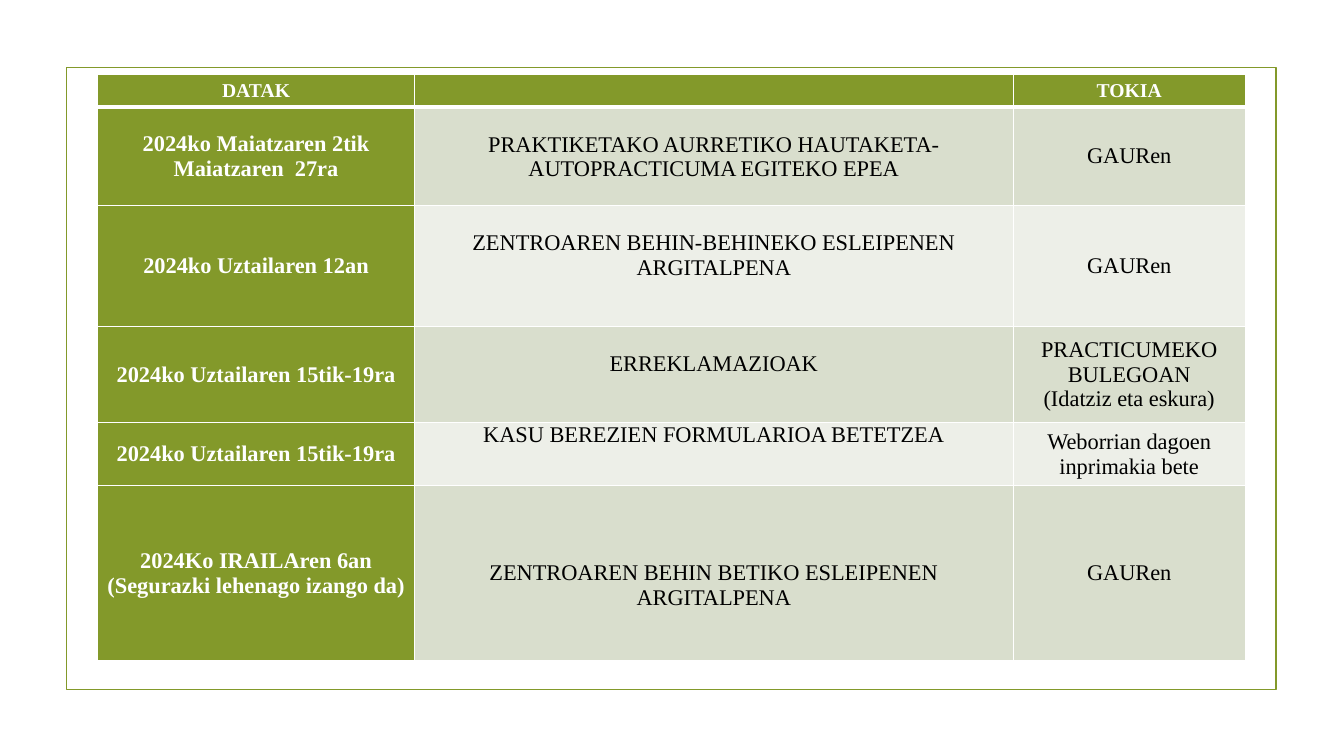
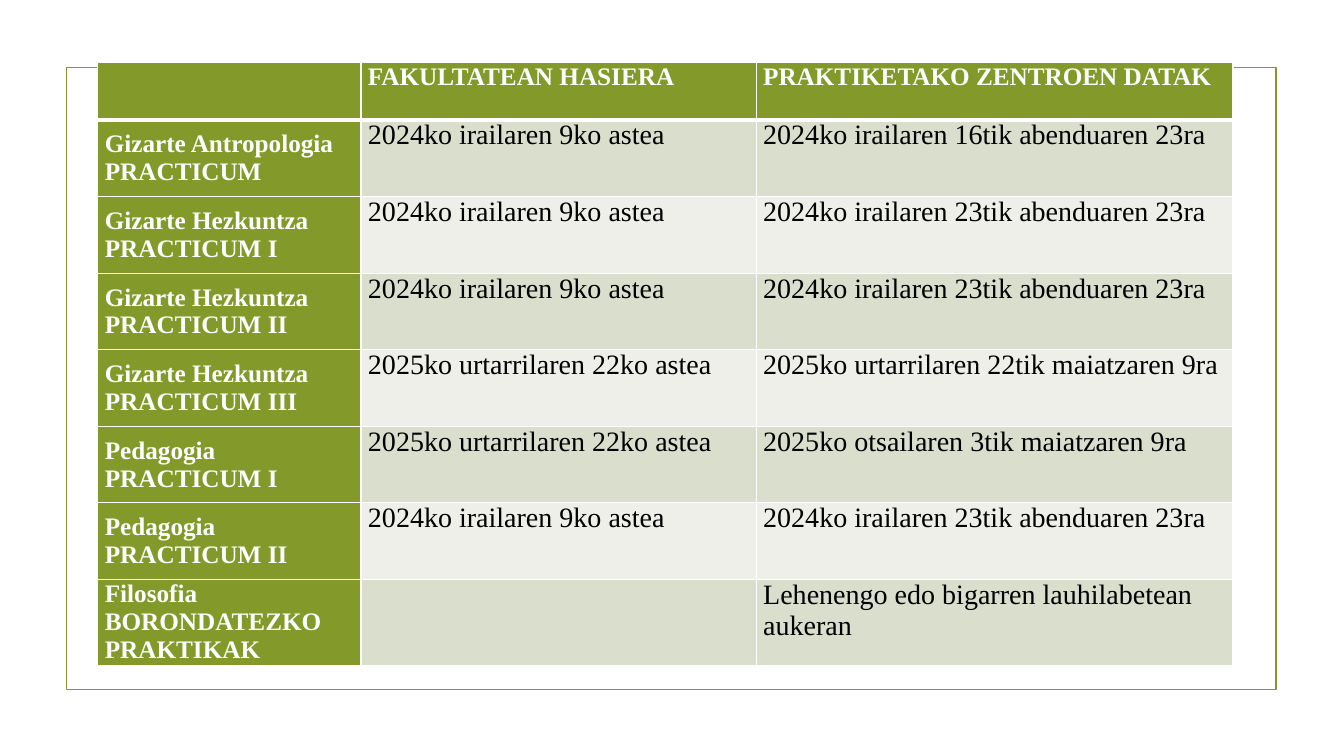
from dataclasses import dataclass

from pptx import Presentation
from pptx.dml.color import RGBColor
from pptx.enum.shapes import MSO_SHAPE
from pptx.enum.text import MSO_ANCHOR, PP_ALIGN
from pptx.oxml import parse_xml
from pptx.oxml.ns import nsdecls
from pptx.util import Inches, Pt

TOP, MIDDLE = MSO_ANCHOR.TOP, MSO_ANCHOR.MIDDLE
LEFT, CENTER = PP_ALIGN.LEFT, PP_ALIGN.CENTER


@dataclass(frozen=True)
class Theme:
    font: str = "Times New Roman"
    green: str = "83992A"
    bands: tuple = ("D9DECD", "EDEFE8")
    white: str = "FFFFFF"
    black: str = "000000"
    frame_width: float = 1.25
    rule: int = 1
    header_rule: int = 3
    side_margin: float = 0.07


THEME = Theme()

# "sizes" are points for header, first column and body; "anchors" are one per
# column; "drops" are top margins of the second column, in inches.
CALENDAR = {
    "at": (0.97, 0.74),
    "cols": (3.14, 5.94, 2.3),
    "heights": (0.32, 0.98, 1.2, 0.95, 0.63, 1.73),
    "sizes": (14, 16, 16),
    "align": CENTER,
    "header_anchor": MIDDLE,
    "anchors": (MIDDLE, TOP, MIDDLE),
    "drops": (0, 0.25, 0.25, 0.25, 0, 0.74),
    "rows": [
        ("DATAK", "", "TOKIA"),
        ("2024ko Maiatzaren 2tik Maiatzaren  27ra",
         "PRAKTIKETAKO AURRETIKO HAUTAKETA-AUTOPRACTICUMA EGITEKO EPEA",
         "GAURen"),
        ("2024ko Uztailaren 12an",
         "ZENTROAREN BEHIN-BEHINEKO ESLEIPENEN ARGITALPENA", "GAURen"),
        ("2024ko Uztailaren 15tik-19ra", "ERREKLAMAZIOAK",
         "PRACTICUMEKO BULEGOAN\n(Idatziz eta eskura)"),
        ("2024ko Uztailaren 15tik-19ra", "KASU BEREZIEN FORMULARIOA BETETZEA",
         "Weborrian dagoen inprimakia bete"),
        ("2024Ko IRAILAren 6an (Segurazki lehenago izango da)",
         "ZENTROAREN BEHIN BETIKO ESLEIPENEN ARGITALPENA", "GAURen"),
    ],
}

PLACEMENTS = {
    "at": (0.97, 0.62),
    "cols": (2.61, 3.92, 4.73),
    "heights": (0.57,) + (0.76,) * 6 + (0.85,),
    "sizes": (18, 18, 20),
    "align": LEFT,
    "header_anchor": TOP,
    "anchors": (MIDDLE, TOP, TOP),
    "drops": (0,) * 8,
    "rows": [
        ("", "FAKULTATEAN HASIERA", "PRAKTIKETAKO ZENTROEN DATAK"),
        ("Gizarte Antropologia\nPRACTICUM", "2024ko irailaren 9ko astea",
         "2024ko irailaren 16tik abenduaren 23ra"),
        ("Gizarte Hezkuntza\nPRACTICUM I", "2024ko irailaren 9ko astea",
         "2024ko irailaren 23tik abenduaren 23ra"),
        ("Gizarte Hezkuntza\nPRACTICUM II", "2024ko irailaren 9ko astea",
         "2024ko irailaren 23tik abenduaren 23ra"),
        ("Gizarte Hezkuntza\nPRACTICUM III", "2025ko urtarrilaren 22ko astea",
         "2025ko urtarrilaren 22tik maiatzaren 9ra"),
        ("Pedagogia\nPRACTICUM I", "2025ko urtarrilaren 22ko astea",
         "2025ko otsailaren 3tik maiatzaren 9ra"),
        ("Pedagogia\nPRACTICUM II", "2024ko irailaren 9ko astea",
         "2024ko irailaren 23tik abenduaren 23ra"),
        ("Filosofia\nBORONDATEZKO\nPRAKTIKAK", "",
         "Lehenengo edo bigarren lauhilabetean aukeran"),
    ],
}


def rgb(color):
    return RGBColor.from_string(color)


def add_frame(s):
    frame = s.shapes.add_shape(MSO_SHAPE.RECTANGLE, Inches(0.66), Inches(0.67),
                               Inches(12), Inches(6.17))
    frame.shadow.inherit = False
    frame.fill.background()
    frame.line.color.rgb = rgb(THEME.green)
    frame.line.width = Pt(THEME.frame_width)


def set_borders(cell, row):
    """White rules all round, heavier between the header and the body."""
    widths = {"L": THEME.rule, "R": THEME.rule,
              "T": THEME.header_rule if row == 1 else THEME.rule,
              "B": THEME.header_rule if row == 0 else THEME.rule}
    tcPr = cell._tc.get_or_add_tcPr()
    for side, width in widths.items():
        tcPr.append(parse_xml(
            f'<a:ln{side} {nsdecls("a")} w="{Pt(width)}"><a:solidFill>'
            f'<a:srgbClr val="{THEME.white}"/></a:solidFill></a:ln{side}>'))


def fill_cell(cell, text, row, col, data):
    strong = row == 0 or col == 0
    header_size, label_size, body_size = data["sizes"]
    size = header_size if row == 0 else label_size if col == 0 else body_size

    set_borders(cell, row)
    cell.fill.solid()
    cell.fill.fore_color.rgb = rgb(THEME.green if strong else THEME.bands[(row - 1) % 2])
    cell.margin_left = cell.margin_right = Inches(THEME.side_margin)
    cell.margin_top = Inches(data["drops"][row] if col == 1 else 0)
    cell.margin_bottom = 0
    cell.vertical_anchor = data["header_anchor"] if row == 0 else data["anchors"][col]
    cell.text_frame.text = text
    for p in cell.text_frame.paragraphs:
        p.alignment = data["align"]
        p.font.name = THEME.font
        p.font.size = Pt(size)
        p.font.bold = strong
        p.font.color.rgb = rgb(THEME.white if strong else THEME.black)


def add_schedule(s, data):
    cols, heights, rows = data["cols"], data["heights"], data["rows"]
    left, top = data["at"]
    table = s.shapes.add_table(len(rows), len(cols), Inches(left), Inches(top),
                               Inches(sum(cols)), Inches(sum(heights))).table
    table.horz_banding = False
    for column, width in zip(table.columns, cols):
        column.width = Inches(width)
    for i, (height, texts) in enumerate(zip(heights, rows)):
        table.rows[i].height = Inches(height)
        for j, text in enumerate(texts):
            fill_cell(table.cell(i, j), text, i, j, data)


def main():
    prs = Presentation()
    prs.slide_width, prs.slide_height = Inches(13.33), Inches(7.5)
    blank = prs.slide_layouts[6]
    for data in (CALENDAR, PLACEMENTS):
        s = prs.slides.add_slide(blank)
        add_frame(s)
        add_schedule(s, data)
    prs.save("out.pptx")


if __name__ == "__main__":
    main()
